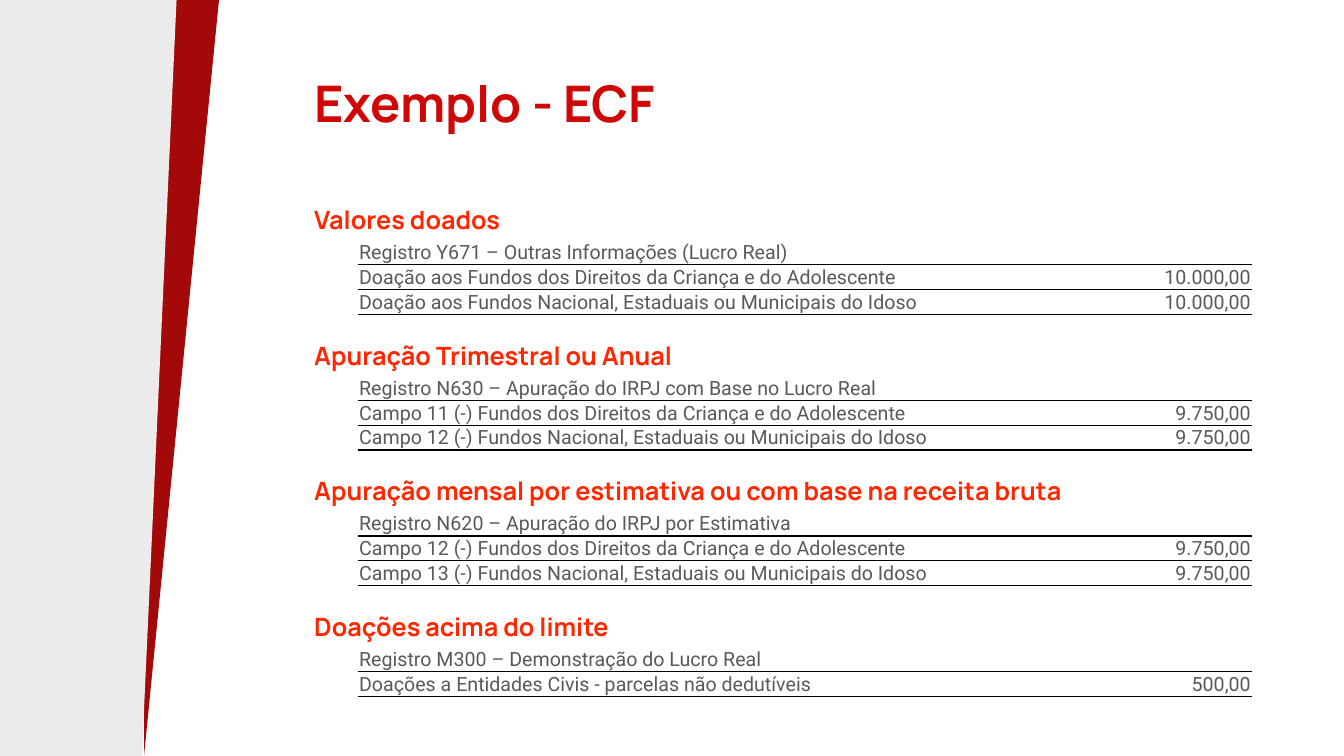
from dataclasses import dataclass
from typing import Any

from lxml import etree
from pptx import Presentation
from pptx.dml.color import RGBColor
from pptx.enum.shapes import MSO_SHAPE
from pptx.enum.text import MSO_ANCHOR, PP_ALIGN
from pptx.oxml.ns import qn
from pptx.util import Cm, Pt

TRIANGLE = MSO_SHAPE.RIGHT_TRIANGLE
MANUAL_INPUT = MSO_SHAPE.FLOWCHART_MANUAL_INPUT
TOP, MIDDLE = MSO_ANCHOR.TOP, MSO_ANCHOR.MIDDLE
LEFT, RIGHT = PP_ALIGN.LEFT, PP_ALIGN.RIGHT

DARK_RED = RGBColor(0xA3, 0x09, 0x09)
LIGHT_GREY = RGBColor(0xEB, 0xEB, 0xEB)
TITLE_RED = RGBColor(0xCF, 0x07, 0x07)
HEADING_RED = RGBColor(0xFF, 0x27, 0x00)
TEXT_GREY = RGBColor(0x59, 0x59, 0x59)
RULE_COLOR = "000000"

TITLE_FONT = {"name": "Manrope", "size": Pt(36), "bold": True}
HEADING_FONT = {"name": "Manrope", "size": Pt(18), "bold": True}
CELL_FONT = {"name": "Roboto", "size": Pt(14), "bold": False}
CELL_FORMAT = {
    "vertical_anchor": MIDDLE,
    "margin_left": Cm(0.03),
    "margin_right": Cm(0.03),
    "margin_top": Cm(0.03),
    "margin_bottom": Cm(0),
}

PLAIN_TABLE_STYLE = "{2D5ABB26-0587-4C30-8999-92F81FD0307C}"
CONTENT_LEFT, CONTENT_WIDTH = 7.67, 23.88
TABLE_LEFT, COLUMN_WIDTHS = 9.02, (19.89, 2.64)
FIRST_HEADING_TOP, SECTION_STEP = 5.03, 3.415
HEADING_HEIGHT, ROW_HEIGHT = 1.02, 0.6


@dataclass
class Panel:
    kind: MSO_SHAPE
    left: float
    top: float
    width: float
    height: float
    color: RGBColor
    rotation: float = 0
    line_width: float = 0


@dataclass
class Section:
    heading: str
    register: str
    entries: list[tuple[str, str]]


PANELS = [
    Panel(TRIANGLE, 3.63, 0, 1.89, 19.05, DARK_RED),
    Panel(MANUAL_INPUT, -7.34, 7.34, 19.05, 4.37, LIGHT_GREY, 270, 4.5),
]

SECTIONS = [
    Section("Valores doados", "Registro Y671 – Outras Informações (Lucro Real)", [
        ("Doação aos Fundos dos Direitos da Criança e do Adolescente", "10.000,00"),
        ("Doação aos Fundos Nacional, Estaduais ou Municipais do Idoso", "10.000,00"),
    ]),
    Section("Apuração Trimestral ou Anual",
            "Registro N630 – Apuração do IRPJ com Base no Lucro Real", [
        ("Campo 11 (-) Fundos dos Direitos da Criança e do Adolescente", "9.750,00"),
        ("Campo 12 (-) Fundos Nacional, Estaduais ou Municipais do Idoso", "9.750,00"),
    ]),
    Section("Apuração mensal por estimativa ou com base na receita bruta",
            "Registro N620 – Apuração do IRPJ por Estimativa", [
        ("Campo 12 (-) Fundos dos Direitos da Criança e do Adolescente", "9.750,00"),
        ("Campo 13 (-) Fundos Nacional, Estaduais ou Municipais do Idoso", "9.750,00"),
    ]),
    Section("Doações acima do limite", "Registro M300 – Demonstração do Lucro Real", [
        ("Doações a Entidades Civis - parcelas não dedutíveis", "500,00"),
    ]),
]


def apply_format(target: Any, values: dict[str, Any]) -> None:
    for name, value in values.items():
        setattr(target, name, value)


def write_text(text_frame: Any, text: str, font: dict[str, Any],
               color: RGBColor, alignment: PP_ALIGN = LEFT) -> None:
    paragraph = text_frame.paragraphs[0]
    paragraph.alignment = alignment
    run = paragraph.add_run()
    run.text = text
    apply_format(run.font, font)
    run.font.color.rgb = color


def draw_panel(slide: Any, panel: Panel) -> None:
    shape = slide.shapes.add_shape(panel.kind, Cm(panel.left), Cm(panel.top),
                                   Cm(panel.width), Cm(panel.height))
    shape.shadow.inherit = False
    shape.rotation = panel.rotation
    shape.element.spPr.find(qn("a:xfrm")).set("flipV", "1")
    shape.fill.solid()
    shape.fill.fore_color.rgb = panel.color
    if panel.line_width:
        shape.line.color.rgb = panel.color
        shape.line.width = Pt(panel.line_width)
    else:
        shape.line.fill.background()


def draw_title(slide: Any, text: str) -> None:
    title = slide.shapes.title
    apply_format(title, {"left": Cm(CONTENT_LEFT), "top": Cm(1.7),
                         "width": Cm(CONTENT_WIDTH), "height": Cm(3.66)})
    title.text_frame.vertical_anchor = TOP
    write_text(title.text_frame, text, TITLE_FONT, TITLE_RED)


def draw_heading(slide: Any, text: str, top: float) -> None:
    shape = slide.shapes.add_textbox(Cm(CONTENT_LEFT), Cm(top),
                                     Cm(CONTENT_WIDTH), Cm(HEADING_HEIGHT))
    shape.text_frame.word_wrap = True
    write_text(shape.text_frame, text, HEADING_FONT, HEADING_RED)


def format_cell(cell: Any) -> None:
    apply_format(cell, CELL_FORMAT)
    properties = cell._tc.get_or_add_tcPr()
    rule = etree.SubElement(properties, qn("a:lnB"), w=str(Pt(1)))
    fill = etree.SubElement(rule, qn("a:solidFill"))
    etree.SubElement(fill, qn("a:srgbClr"), val=RULE_COLOR)
    cell.fill.background()


def draw_table(slide: Any, section: Section, top: float) -> None:
    row_count = len(section.entries) + 1
    frame = slide.shapes.add_table(
        row_count, len(COLUMN_WIDTHS), Cm(TABLE_LEFT), Cm(top),
        Cm(sum(COLUMN_WIDTHS)), Cm(ROW_HEIGHT * row_count))
    for style in frame.element.iter(qn("a:tableStyleId")):
        style.text = PLAIN_TABLE_STYLE
    table = frame.table
    apply_format(table, {"first_row": False, "horz_banding": False})
    for column, width in zip(table.columns, COLUMN_WIDTHS):
        column.width = Cm(width)
    for cell in table.iter_cells():
        format_cell(cell)

    # Register name across both columns, then one row per entry
    table.cell(0, 0).merge(table.cell(0, 1))
    write_text(table.cell(0, 0).text_frame, section.register, CELL_FONT, TEXT_GREY)
    for row, (label, amount) in enumerate(section.entries, start=1):
        write_text(table.cell(row, 0).text_frame, label, CELL_FONT, TEXT_GREY)
        write_text(table.cell(row, 1).text_frame, amount, CELL_FONT, TEXT_GREY, RIGHT)


def main() -> None:
    presentation = Presentation()
    presentation.slide_width = Cm(33.87)
    presentation.slide_height = Cm(19.05)
    slide = presentation.slides.add_slide(presentation.slide_layouts[5])

    # Side panels
    for panel in PANELS:
        draw_panel(slide, panel)

    # Title and sections
    draw_title(slide, "Exemplo - ECF")
    for index, section in enumerate(SECTIONS):
        top = FIRST_HEADING_TOP + index * SECTION_STEP
        draw_heading(slide, section.heading, top)
        draw_table(slide, section, top + HEADING_HEIGHT)

    presentation.save("out.pptx")


if __name__ == "__main__":
    main()
